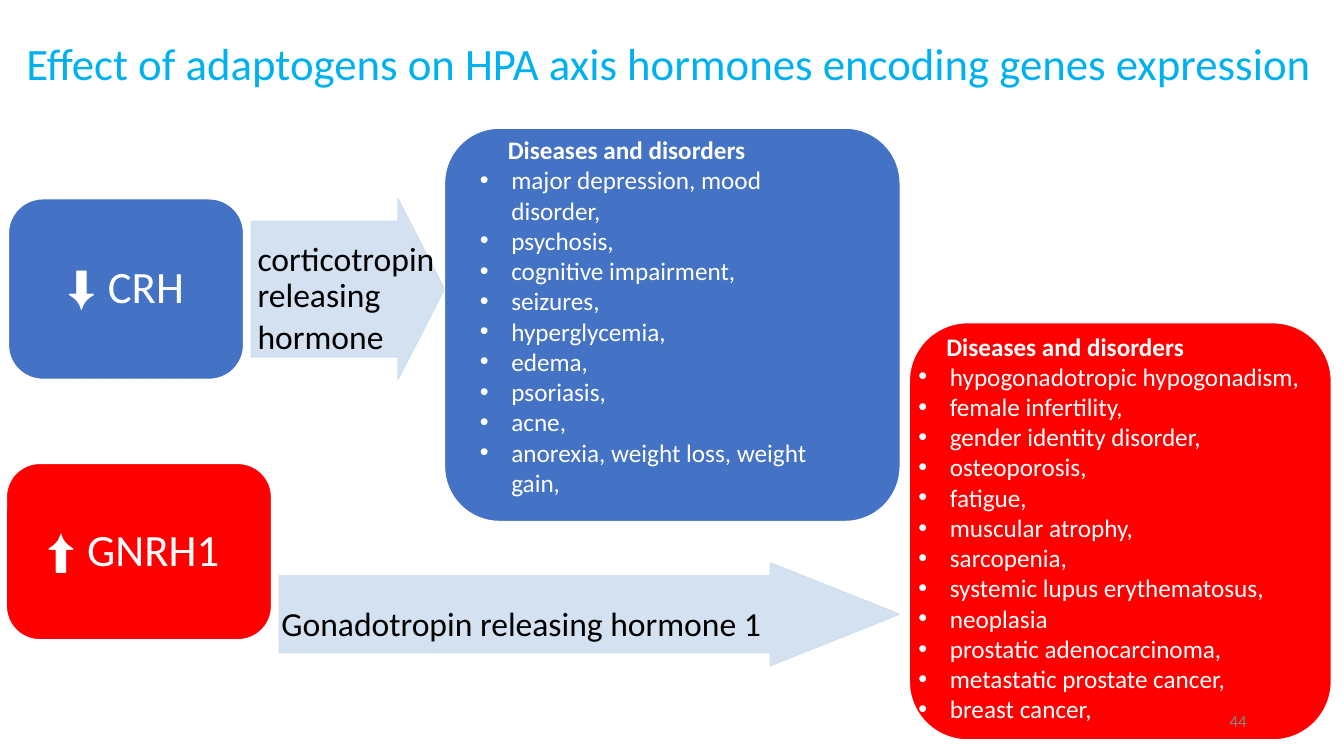
"""Build the slide on adaptogens and HPA axis hormone gene expression."""
from lxml import etree
from pptx import Presentation
from pptx import util as u
from pptx.dml.color import RGBColor
from pptx.enum import shapes, text
from pptx.oxml.ns import qn

WHITE = RGBColor(0xFF, 0xFF, 0xFF)
BLACK = RGBColor(0x00, 0x00, 0x00)
BLUE = RGBColor(0x44, 0x72, 0xC4)
RED = RGBColor(0xFF, 0x00, 0x00)
PALE = RGBColor(0xD0, 0xDE, 0xEF)
CYAN = RGBColor(0x00, 0xB0, 0xF0)
GREY = RGBColor(0x88, 0x88, 0x88)
HEADING = "Diseases and disorders"

deck = Presentation()
deck.slide_width, deck.slide_height = u.Pt(960), u.Pt(540)
slide = deck.slides.add_slide(deck.slide_layouts[6])


def add_block(preset, place, adjustments, fill, line):
    block = slide.shapes.add_shape(preset, *map(u.Pt, place))
    for index, value in enumerate(adjustments):
        block.adjustments[index] = value
    block.shadow.inherit = False
    block.fill.solid()
    block.fill.fore_color.rgb = fill
    block.line.color.rgb = line
    block.line.width = u.Pt(1)
    return block


def add_lines(place, lines, size, color, align=text.PP_ALIGN.LEFT, spacing=1.0):
    frame = slide.shapes.add_textbox(*map(u.Pt, place)).text_frame
    frame.word_wrap = True
    frame.margin_left = frame.margin_right = frame.margin_top = frame.margin_bottom = 0
    frame.text = "\n".join(lines)
    for paragraph in frame.paragraphs:
        paragraph.alignment = align
        paragraph.line_spacing = spacing
        for run in paragraph.runs:
            run.font.name = "Calibri"
            run.font.size = u.Pt(size)
            run.font.color.rgb = color
    return frame


title = add_lines((1, -5, 954, 104),
                  ["Effect of adaptogens on HPA axis hormones encoding genes expression"],
                  32, CYAN, text.PP_ALIGN.CENTER, 0.9)
title.vertical_anchor = text.MSO_ANCHOR.MIDDLE

hormones = [
    ((179.5, 142, 138, 129), (0.75, 0.257), (184, 173, 162, 84),
     ["corticotropin releasing", "hormone"]),
    ((199.5, 402, 443, 73.5), (0.745, 1.255), (201, 433.6, 400, 28),
     ["Gonadotropin releasing hormone 1"]),
]
for arrow_place, arrow_form, name_place, name in hormones:
    arrow = add_block(shapes.MSO_SHAPE.RIGHT_ARROW, arrow_place, arrow_form, PALE, PALE)
    for color in arrow.fill._xPr.iter(qn("a:srgbClr")):
        etree.SubElement(color, qn("a:alpha"), val="90000")
    hormone = add_lines(name_place, name, 24, BLACK, spacing=0.9)
    for paragraph in hormone.paragraphs[1:]:
        paragraph.space_before = u.Pt(4)

genes = [
    ((6, 142, 168, 129), BLUE, "⬇ ", "CRH", 0),
    ((4.5, 331, 189.5, 126), RED, "⬆ ", "GNRH1", 8),
]
for place, fill, direction, gene, right_margin in genes:
    box = add_block(shapes.MSO_SHAPE.ROUNDED_RECTANGLE, place, (0.19,), fill, WHITE)
    label = box.text_frame
    label.margin_left, label.margin_right = 0, u.Pt(right_margin)
    label.vertical_anchor = text.MSO_ANCHOR.MIDDLE
    line = label.paragraphs[0]
    line.alignment = text.PP_ALIGN.CENTER
    line.line_spacing = 0.9
    for words, font in ((direction, "Arial"), (gene, "Calibri")):
        run = line.add_run()
        run.text = words
        run.font.name = font
        run.font.size = u.Pt(32)
        run.font.color.rgb = WHITE

diseases = [
    ((317.5, 91.5, 325.5, 281), BLUE, (342.7, 96, 265, 264), [
        "major depression, mood disorder,", "psychosis,", "cognitive impairment,",
        "seizures,", "hyperglycemia,", "edema,", "psoriasis,", "acne,",
        "anorexia, weight loss, weight gain,"]),
    ((649.5, 230.5, 301.5, 298), RED, (656, 236.3, 288, 286), [
        "hypogonadotropic hypogonadism,", "female infertility,",
        "gender identity disorder,", "osteoporosis,", "fatigue,", "muscular atrophy,",
        "sarcopenia,", "systemic lupus erythematosus,", "neoplasia",
        "prostatic adenocarcinoma,", "metastatic prostate cancer,", "breast cancer,"]),
]
for box_place, fill, list_place, items in diseases:
    add_block(shapes.MSO_SHAPE.ROUNDED_RECTANGLE, box_place, (0.14,), fill, WHITE)
    listing = add_lines(list_place, [HEADING, *items], 18, WHITE)
    heading, *entries = listing.paragraphs
    heading.runs[0].font.bold = True
    heading._p.get_or_add_pPr().set("indent", str(u.Pt(20)))
    for entry in entries:
        properties = entry._p.get_or_add_pPr()
        properties.set("marL", str(u.Pt(22.5)))
        properties.set("indent", str(-u.Pt(22.5)))
        etree.SubElement(properties, qn("a:buFont"), typeface="Arial")
        etree.SubElement(properties, qn("a:buChar"), char="•")

page_number = add_lines((870, 504, 20.5, 21), ["44"], 12, GREY, text.PP_ALIGN.RIGHT)
page_number.vertical_anchor = text.MSO_ANCHOR.MIDDLE

deck.save("out.pptx")
